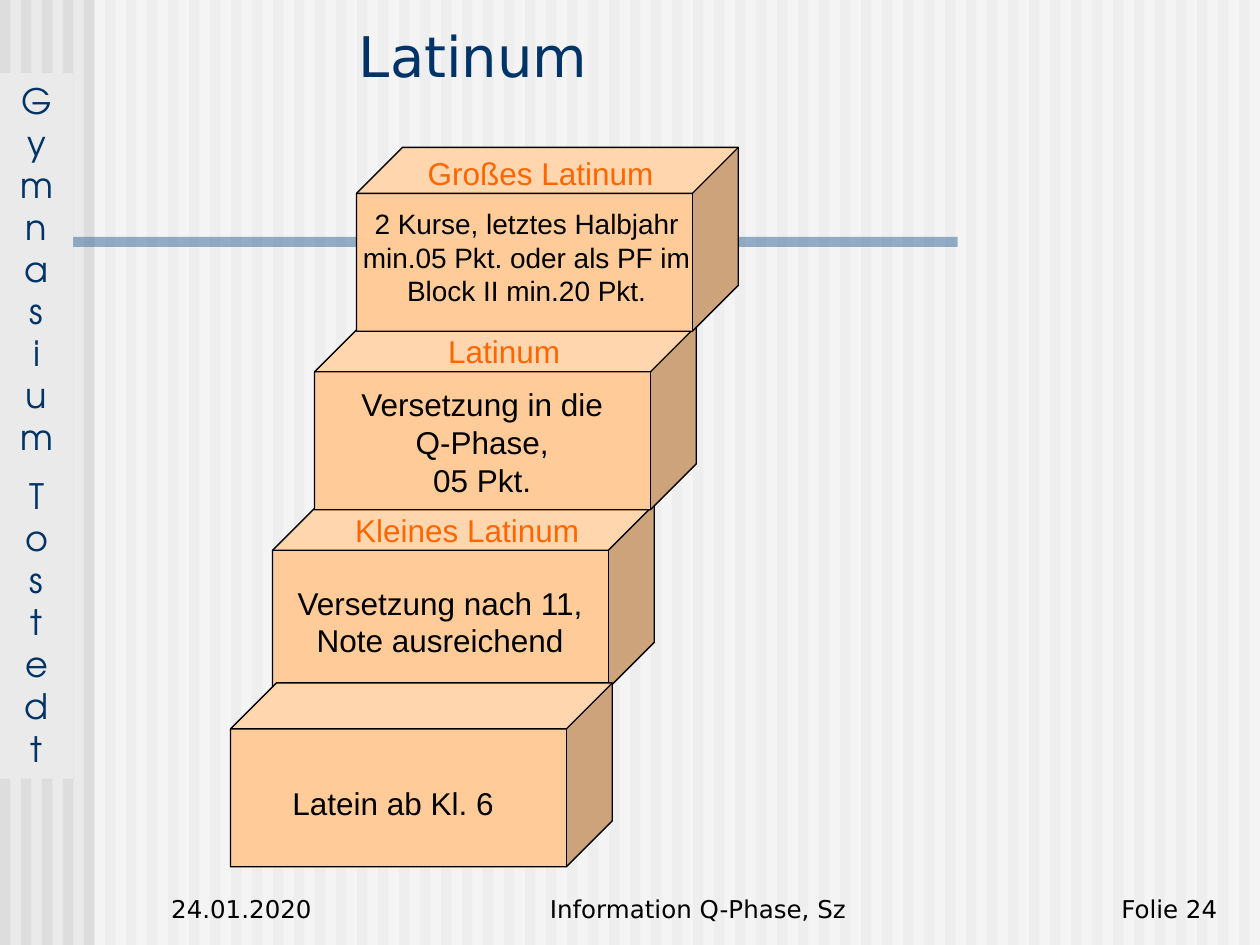
from lxml.etree import SubElement
from pptx import Presentation
from pptx.dml.color import RGBColor
from pptx.enum.shapes import MSO_SHAPE
from pptx.enum.text import MSO_ANCHOR, PP_ALIGN
from pptx.oxml.ns import qn
from pptx.util import Inches, Pt

BLACK = RGBColor(0x00, 0x00, 0x00)
WHITE = RGBColor(0xFF, 0xFF, 0xFF)
NAVY = RGBColor(0x00, 0x33, 0x66)
BLUE = RGBColor(0x33, 0x66, 0x99)
ORANGE = RGBColor(0xFF, 0x66, 0x00)
PEACH = RGBColor(0xFF, 0xCC, 0x99)
PAPER = RGBColor(0xEA, 0xEA, 0xEA)
STRIPE = RGBColor(0xDD, 0xDD, 0xDD)

WIDTH, HEIGHT = 10, 7.5
STRIPES = 60
CUBE_WIDTH, CUBE_HEIGHT = 3.03, 1.46
FIRST_LEFT, FIRST_TOP = 1.83, 5.42
STEP_RIGHT, STEP_UP = 1 / 3, 17 / 12

SCHOOL = ["Gymnasium", "Tostedt"]
# In drawing order; boxes are left, top, width, height from the cube's corner.
STEPS = [
    {"level": 1, "label": "Kleines Latinum", "label_box": (0.42, 0, 2.25, 0.4),
     "body": "Versetzung nach 11, Note ausreichend",
     "body_box": (0.08, 0.58, 2.5, 0.7), "size": 18},
    {"level": 2, "label": "Latinum", "label_box": (0.42, 0, 2.17, 0.4),
     "body": "Versetzung in die\vQ-Phase,\v05 Pkt.",
     "body_box": (0.08, 0.42, 2.5, 1), "size": 18},
    {"level": 3, "label": "Großes Latinum", "label_box": (0.25, 0, 2.42, 0.4),
     "body": "2 Kurse, letztes Halbjahr min.05 Pkt. oder als PF im Block II min.20 Pkt.",
     "body_box": (-0.05, 0.42, 2.8, 0.91), "size": 16},
    {"level": 0, "label": None, "label_box": None,
     "body": "Latein ab Kl. 6", "body_box": (0, 0.75, 2.58, 0.4), "size": 18},
]
FOOTER = [
    ("24.01.2020", (1.26, 6.88, 2.08, 0.5), PP_ALIGN.LEFT),
    ("Information Q-Phase, Sz", (3.58, 6.88, 3.92, 0.5), PP_ALIGN.CENTER),
    ("Folie 24", (7.68, 6.88, 2.08, 0.5), PP_ALIGN.RIGHT),
]


def add_filled(page, kind, area, color, opacity=100):
    shape = page.shapes.add_shape(kind, *map(Inches, area))
    shape.shadow.inherit = False
    shape.fill.solid()
    shape.fill.fore_color.rgb = color
    shape.line.fill.background()
    if opacity < 100:
        color_element = shape.fill._xPr.find(".//" + qn("a:srgbClr"))
        SubElement(color_element, qn("a:alpha"), val=str(opacity * 1000))
    return shape


def write(box, paragraphs, size, font, color, align, anchor, side_inset=0.1):
    frame = box.text_frame
    frame.word_wrap = True
    frame.vertical_anchor = anchor
    frame.margin_left = frame.margin_right = Inches(side_inset)
    frame.text = "\n".join(paragraphs)
    for index, para in enumerate(frame.paragraphs):
        para.alignment = align
        para.font.size = Pt(size)
        para.font.name = font
        para.font.color.rgb = color
        if index:
            para.space_before = Pt(size / 2)


def add_text(page, area, text, size, font, color, align, anchor, side_inset=0.1):
    box = page.shapes.add_textbox(*map(Inches, area))
    write(box, [text], size, font, color, align, anchor, side_inset)


def add_backdrop(page):
    page.background.fill.solid()
    page.background.fill.fore_color.rgb = PAPER
    pitch = WIDTH / STRIPES
    for index in range(STRIPES):
        add_filled(page, MSO_SHAPE.RECTANGLE, (index * pitch, 0, pitch / 2, HEIGHT), STRIPE)
    add_filled(page, MSO_SHAPE.RECTANGLE, (0.75, 0, WIDTH - 0.75, HEIGHT), WHITE, 50)
    add_filled(page, MSO_SHAPE.RECTANGLE, (0, 1.88, 7.6, 0.08), BLUE, 50)
    banner = add_filled(page, MSO_SHAPE.RECTANGLE, (0, 0.58, 0.58, 5.6), PAPER)
    write(banner, ["\v".join(word) for word in SCHOOL], 20, "TeX Gyre Adventor",
          NAVY, PP_ALIGN.CENTER, MSO_ANCHOR.TOP)


def add_step(page, step):
    left = FIRST_LEFT + step["level"] * STEP_RIGHT
    top = FIRST_TOP - step["level"] * STEP_UP
    cube = add_filled(page, MSO_SHAPE.CUBE, (left, top, CUBE_WIDTH, CUBE_HEIGHT), PEACH)
    cube.adjustments[0] = 0.25
    cube.line.color.rgb = BLACK
    cube.line.width = Pt(0.75)
    texts = [(step["body"], step["body_box"], step["size"], BLACK)]
    if step["label"]:
        texts.append((step["label"], step["label_box"], 18, ORANGE))
    for text, (across, down, width, height), size, color in texts:
        add_text(page, (left + across, top + down, width, height), text, size,
                 "Arial", color, PP_ALIGN.CENTER, MSO_ANCHOR.TOP, 0.05)


def main():
    deck = Presentation()
    deck.slide_width, deck.slide_height = Inches(WIDTH), Inches(HEIGHT)
    page = deck.slides.add_slide(deck.slide_layouts[6])
    add_backdrop(page)
    add_text(page, (2.75, 0.12, 5.67, 0.63), "Latinum", 32, "DejaVu Sans",
             NAVY, PP_ALIGN.LEFT, MSO_ANCHOR.BOTTOM)
    for step in STEPS:
        add_step(page, step)
    for text, area, align in FOOTER:
        add_text(page, area, text, 14, "DejaVu Sans", BLACK, align, MSO_ANCHOR.BOTTOM)
    deck.save("out.pptx")


if __name__ == "__main__":
    main()
